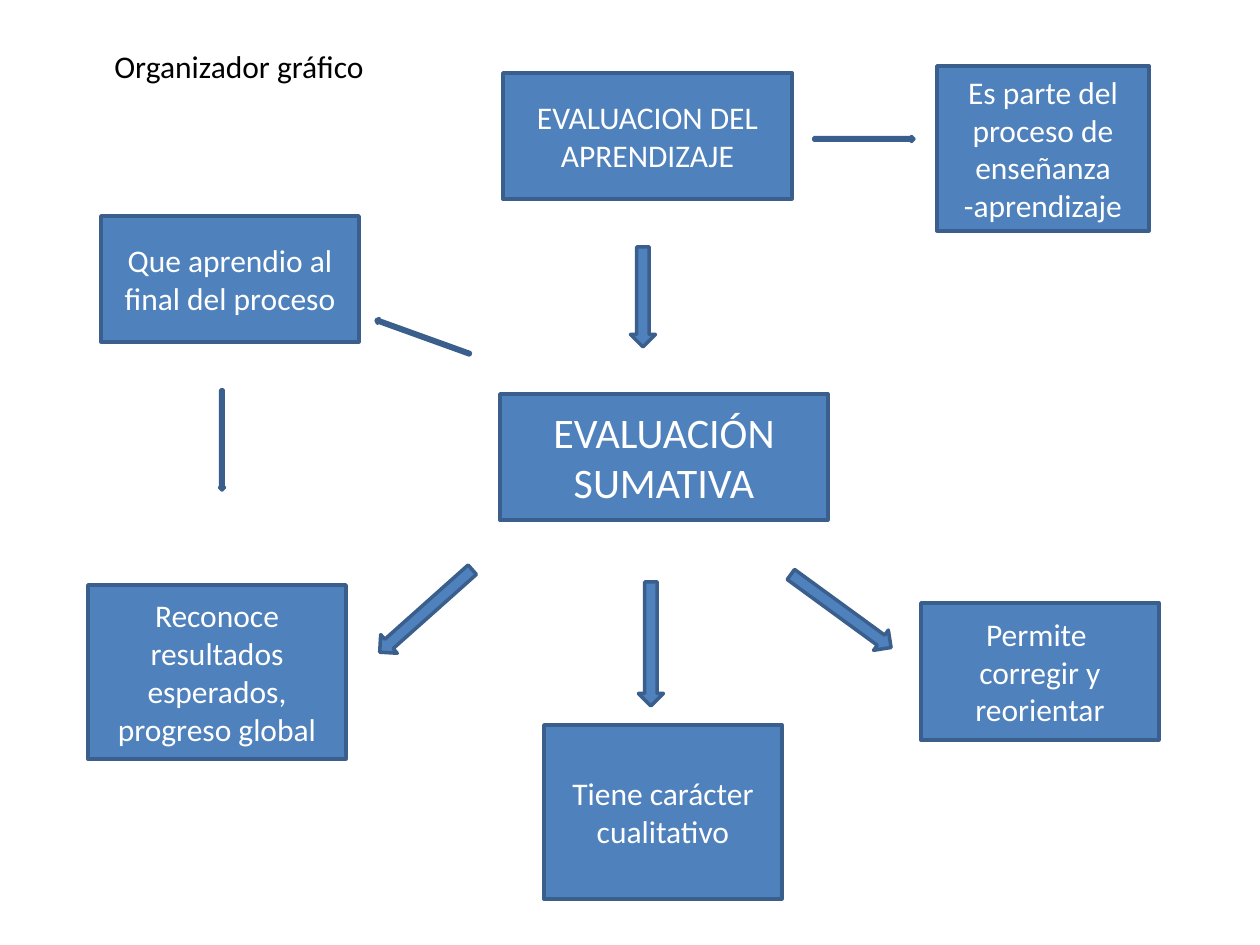
from pptx import Presentation
from pptx.dml.color import RGBColor
from pptx.enum.shapes import MSO_SHAPE
from pptx.enum.text import MSO_ANCHOR, MSO_AUTO_SIZE, PP_ALIGN
from pptx.util import Emu, Pt

RECTANGLE = MSO_SHAPE.RECTANGLE
DOWN_ARROW = MSO_SHAPE.DOWN_ARROW
MIDDLE = MSO_ANCHOR.MIDDLE
CENTER = PP_ALIGN.CENTER
FIT_SHAPE = MSO_AUTO_SIZE.SHAPE_TO_FIT_TEXT

BLUE = RGBColor(0x4F, 0x81, 0xBD)
DARK_BLUE = RGBColor(0x3A, 0x5F, 0x8C)
WHITE = RGBColor(0xFF, 0xFF, 0xFF)
BLACK = RGBColor(0x00, 0x00, 0x00)
FONT = "Calibri"
BODY_SIZE = 18
CENTRAL_SIZE = 24
THICK = 25
THIN = 5


def px(value):
    return Emu(round(value * 914400 / 126))


class ConceptMap:
    def __init__(self, slide):
        self.slide = slide

    def style_text(self, paragraph, size, color):
        paragraph.font.name = FONT
        paragraph.font.size = Pt(size)
        paragraph.font.color.rgb = color

    def blue_shape(self, preset, left, top, width, height):
        shape = self.slide.shapes.add_shape(
            preset, px(left), px(top), px(width), px(height))
        shape.shadow.inherit = False
        shape.fill.solid()
        shape.fill.fore_color.rgb = BLUE
        shape.line.color.rgb = DARK_BLUE
        shape.line.width = Pt(2)
        return shape

    def concept(self, text, left, top, width, height, size=BODY_SIZE):
        frame = self.blue_shape(RECTANGLE, left, top, width, height).text_frame
        frame.word_wrap = True
        frame.vertical_anchor = MIDDLE
        frame.text = text
        for paragraph in frame.paragraphs:
            paragraph.alignment = CENTER
            self.style_text(paragraph, size, WHITE)

    def arrow(self, center_x, center_y, thickness, length, rotation=0):
        arrow = self.blue_shape(
            DOWN_ARROW, center_x - thickness / 2, center_y - length / 2,
            thickness, length)
        arrow.rotation = rotation

    def heading(self, text, left, top, width, height):
        frame = self.slide.shapes.add_textbox(
            px(left), px(top), px(width), px(height)).text_frame
        frame.word_wrap = True
        frame.auto_size = FIT_SHAPE
        frame.text = text
        self.style_text(frame.paragraphs[0], BODY_SIZE, BLACK)


def main():
    presentation = Presentation()
    presentation.slide_width = px(1260)
    presentation.slide_height = px(945)
    concept_map = ConceptMap(
        presentation.slides.add_slide(presentation.slide_layouts[6]))

    concepts = [
        ("EVALUACION DEL\nAPRENDIZAJE", 503, 73, 289, 126),
        ("EVALUACIÓN SUMATIVA", 500, 394, 328, 126, CENTRAL_SIZE),
        ("Reconoce resultados esperados, progreso global", 88, 585, 258, 174),
        ("Tiene carácter cualitativo", 544, 725, 238, 174),
        ("Permite  corregir y reorientar", 921, 603, 238, 137),
        ("Que aprendio al final del proceso", 101, 216, 258, 126),
        ("Es parte del proceso de enseñanza -aprendizaje", 937, 66, 212, 165),
    ]
    for concept in concepts:
        concept_map.concept(*concept)

    arrows = [
        (643, 297, THICK, 100),
        (651, 644, THICK, 124),
        (864, 139, THIN, 100, 270),
        (423, 337, THIN, 100, 109.8),
        (222, 440, THIN, 100),
        (841, 611, THICK, 124, 306.1),
        (426, 611, THICK, 124, 48.3),
    ]
    for arrow in arrows:
        concept_map.arrow(*arrow)

    concept_map.heading("Organizador gráfico", 102, 41, 297, 51)
    presentation.save("out.pptx")


if __name__ == "__main__":
    main()
